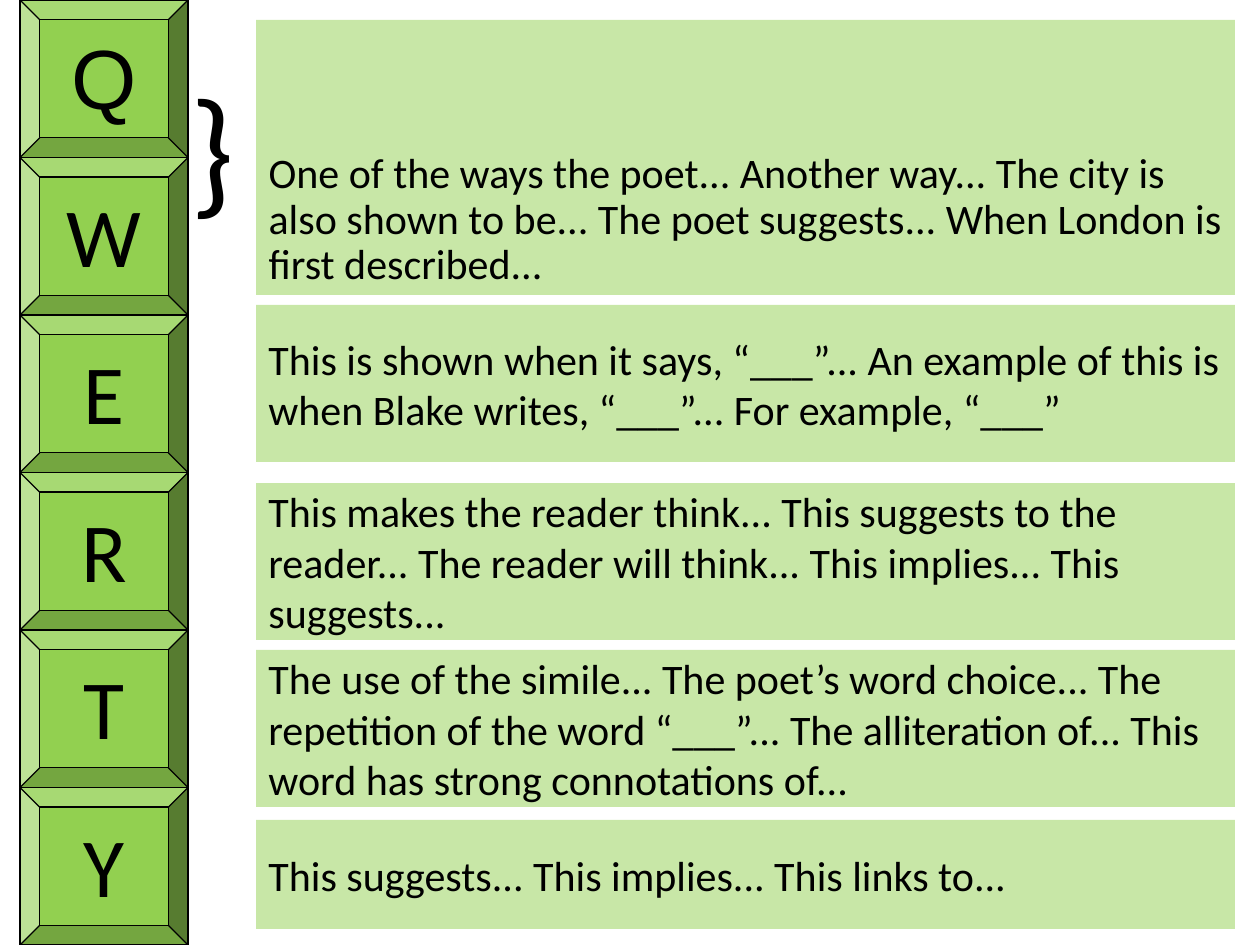
from lxml.etree import SubElement
from pptx import Presentation
from pptx.dml.color import RGBColor
from pptx.enum.shapes import MSO_SHAPE
from pptx.enum.text import MSO_ANCHOR, MSO_AUTO_SIZE, PP_ALIGN
from pptx.oxml.ns import qn
from pptx.util import Pt

KEYS = "QWERTY"
OPENERS = (
    "One of the ways the poet... Another way... The city is also shown to be... "
    "The poet suggests... When London is first described..."
)
PROMPTS = [
    (305, 157, "This is shown when it says, “___”... An example of this is when "
               "Blake writes, “___”... For example, “___”"),
    (483, 157, "This makes the reader think... This suggests to the reader... "
               "The reader will think... This implies... This suggests..."),
    (650, 157, "The use of the simile... The poet’s word choice... The repetition of "
               "the word “___”... The alliteration of... This word has strong connotations of..."),
    (820, 109, "This suggests... This implies... This links to..."),
]
THEME = {
    "green": RGBColor(0x92, 0xD0, 0x50),
    "black": RGBColor(0, 0, 0),
    "alpha": 50000,
    "body": Pt(24),
    "key": Pt(48),
    "brace": Pt(80),
    "font": "Calibri",
    "first_font": "Arial",
}
SLIDE_W, SLIDE_H = 1260, 945
KEY_X, KEY_W = 20, 168
PANEL_X, PANEL_W = 256, 979


def px(n):
    return round(n * 914400 / 126)


def place(sp, *box):
    for name, n in zip(("left", "top", "width", "height"), box):
        setattr(sp, name, px(n))


def write(sp, text, size, anchor, align=PP_ALIGN.LEFT, font=THEME["font"], spacing=1.0):
    tf = sp.text_frame
    frame = {"word_wrap": True, "auto_size": MSO_AUTO_SIZE.NONE, "vertical_anchor": anchor}
    for name, value in frame.items():
        setattr(tf, name, value)
    p = tf.paragraphs[0]
    p.alignment, p.line_spacing = align, spacing
    r = p.add_run()
    r.text = text
    for name, value in {"size": size, "name": font}.items():
        setattr(r.font, name, value)
    r.font.color.rgb = THEME["black"]


def paint(sp, translucent=False):
    sp.fill.solid()
    sp.fill.fore_color.rgb = THEME["green"]
    if translucent:
        color = sp.fill._xPr.find(qn("a:solidFill"))[0]
        SubElement(color, qn("a:alpha"), val=str(THEME["alpha"]))


def add_shape(s, kind, *box):
    sp = s.shapes.add_shape(kind, *map(px, box))
    sp.shadow.inherit = False
    return sp


def main():
    prs = Presentation()
    prs.slide_width, prs.slide_height = px(SLIDE_W), px(SLIDE_H)
    s = prs.slides.add_slide(prs.slide_layouts[5])

    title = s.shapes.title
    place(title, PANEL_X, 20, PANEL_W, 275)
    paint(title, translucent=True)
    write(title, OPENERS, THEME["body"], MSO_ANCHOR.BOTTOM, spacing=0.9)

    key_h = SLIDE_H / len(KEYS)
    for i, letter in enumerate(KEYS):
        key = add_shape(s, MSO_SHAPE.BEVEL, KEY_X, i * key_h, KEY_W, key_h)
        paint(key)
        key.line.color.rgb = THEME["black"]
        key.line.width = Pt(0.75)
        font = THEME["font"] if i else THEME["first_font"]
        write(key, letter, THEME["key"], MSO_ANCHOR.TOP, PP_ALIGN.CENTER, font)

    brace = s.shapes.add_textbox(*map(px, (178, 54, 69, 183)))
    write(brace, "}", THEME["brace"], MSO_ANCHOR.TOP)

    for top, height, text in PROMPTS:
        panel = add_shape(s, MSO_SHAPE.RECTANGLE, PANEL_X, top, PANEL_W, height)
        paint(panel, translucent=True)
        panel.line.fill.background()
        write(panel, text, THEME["body"], MSO_ANCHOR.MIDDLE)

    prs.save("out.pptx")


if __name__ == "__main__":
    main()
